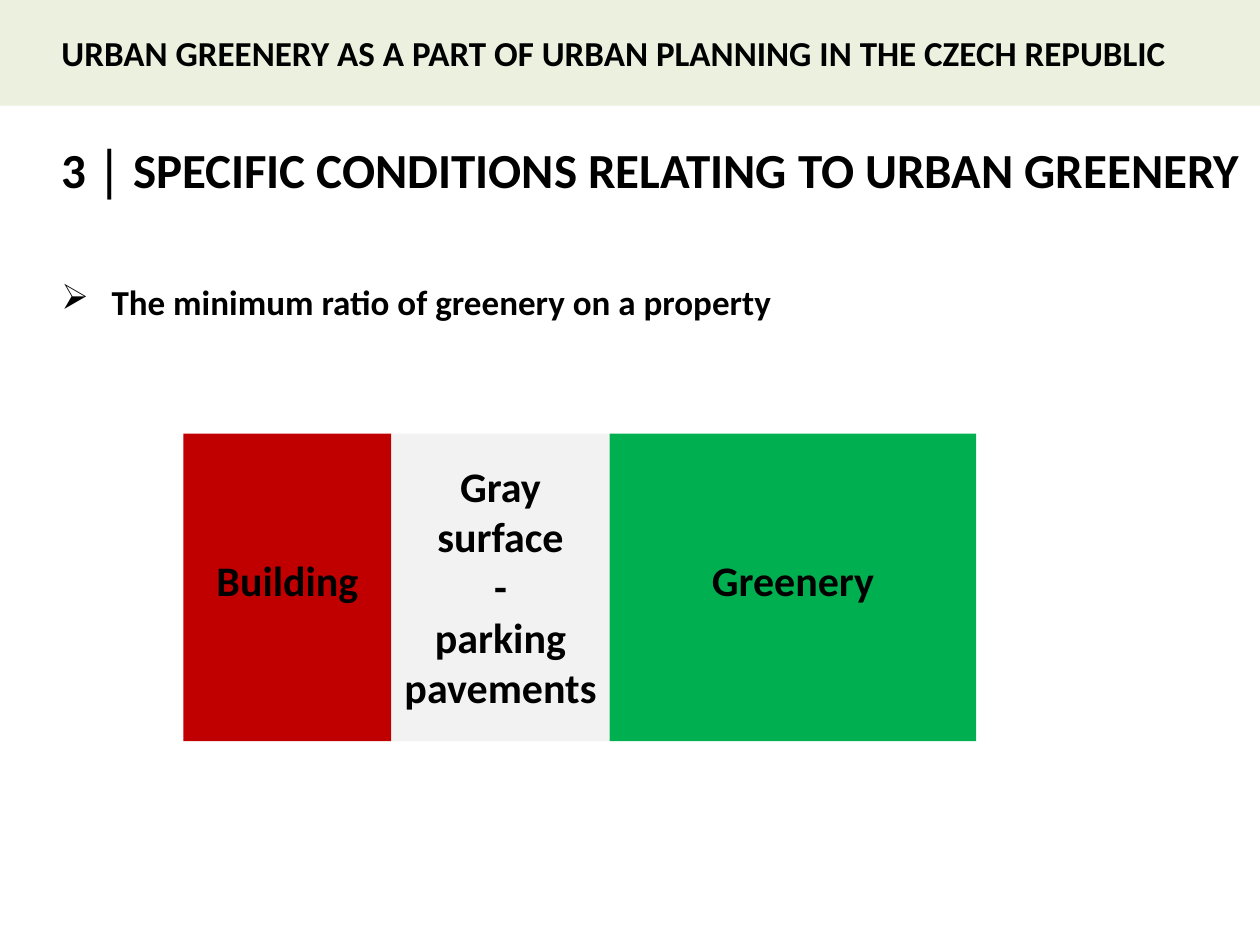
from lxml import etree
from pptx import Presentation
from pptx import util as u
from pptx.dml.color import RGBColor
from pptx.enum import shapes, text
from pptx.oxml.ns import qn

SLIDE_W, SLIDE_H = 25.4, 19.05
MARGIN, HANG = 2.0, 1.01
LEFT, CENTER = text.PP_ALIGN.LEFT, text.PP_ALIGN.CENTER


def colour(hex_value):
    return RGBColor.from_string(hex_value)


def add_block(slide, box, fill):
    """Filled rectangle without outline; box is left, top, width, height in cm."""
    block = slide.shapes.add_shape(shapes.MSO_SHAPE.RECTANGLE, *map(u.Cm, box))
    block.shadow.inherit = False
    block.fill.solid()
    block.fill.fore_color.rgb = colour(fill)
    block.line.fill.background()
    return block


def add_words(slide, box):
    return slide.shapes.add_textbox(*map(u.Cm, box)).text_frame


def write(frame, words, size, align=LEFT, anchor=text.MSO_ANCHOR.TOP):
    frame.text = words
    frame.word_wrap = True
    frame.vertical_anchor = anchor
    for paragraph in frame.paragraphs:
        paragraph.alignment = align
        for run in paragraph.runs:
            run.font.name = "Calibri"
            run.font.size = u.Pt(size)
            run.font.bold = True
            run.font.color.rgb = colour("000000")


def indent(paragraph, left, first=0):
    properties = paragraph._p.get_or_add_pPr()
    properties.set("marL", str(u.Cm(left)))
    properties.set("indent", str(u.Cm(first)))
    return properties


def header_band(slide, box):
    band = add_block(slide, box, "EBF1DE").text_frame
    write(band, "URBAN GREENERY AS A PART OF URBAN PLANNING IN THE CZECH REPUBLIC",
          20, anchor=text.MSO_ANCHOR.MIDDLE)
    indent(band.paragraphs[0], MARGIN - HANG)


def section_title(slide, box):
    title = slide.shapes.title
    title.left, title.top, title.width, title.height = map(u.Cm, box)
    write(title.text_frame, "3 │ SPECIFIC CONDITIONS RELATING TO URBAN GREENERY",
          28, anchor=text.MSO_ANCHOR.MIDDLE)
    indent(title.text_frame.paragraphs[0], MARGIN, -HANG)


def key_point(slide, box):
    point = add_words(slide, box)
    write(point, "The minimum ratio of greenery on a property", 20)
    paragraph = point.paragraphs[0]
    properties = indent(paragraph, MARGIN, -HANG)
    etree.SubElement(properties, qn("a:buChar")).set("char", "➢")
    paragraph.line_spacing = 1.7
    paragraph.space_after = u.Pt(6)


def property_diagram(slide, box):
    left, top, width, height = box
    # Label, fill, share of the width, label offset and label height
    zones = [
        ("Building", "C00000", 1.65, 2.31, 1.27),
        ("Gray surface\n-\nparking\npavements", "F2F2F2", 1.73, 0.41, 5.38),
        ("Greenery", "00B050", 2.91, 2.31, 1.27),
    ]
    total = sum(zone[2] for zone in zones)
    for label, fill, share, offset, label_height in zones:
        zone_width = width * share / total
        add_block(slide, (left, top, zone_width, height), fill)
        caption = add_words(slide, (left, top + offset, zone_width, label_height))
        write(caption, label, 24, CENTER)
        left += zone_width


def main():
    deck = Presentation()
    deck.slide_width, deck.slide_height = u.Cm(SLIDE_W), u.Cm(SLIDE_H)
    slide = deck.slides.add_slide(deck.slide_layouts[5])  # title only

    header_band(slide, (0, 0, SLIDE_W, 2.13))
    section_title(slide, (0, 2.49, SLIDE_W, 1.83))
    key_point(slide, (0, 4.93, SLIDE_W, 2.21))
    property_diagram(slide, (3.7, 8.74, 15.98, 6.2))

    deck.save("out.pptx")


if __name__ == "__main__":
    main()
